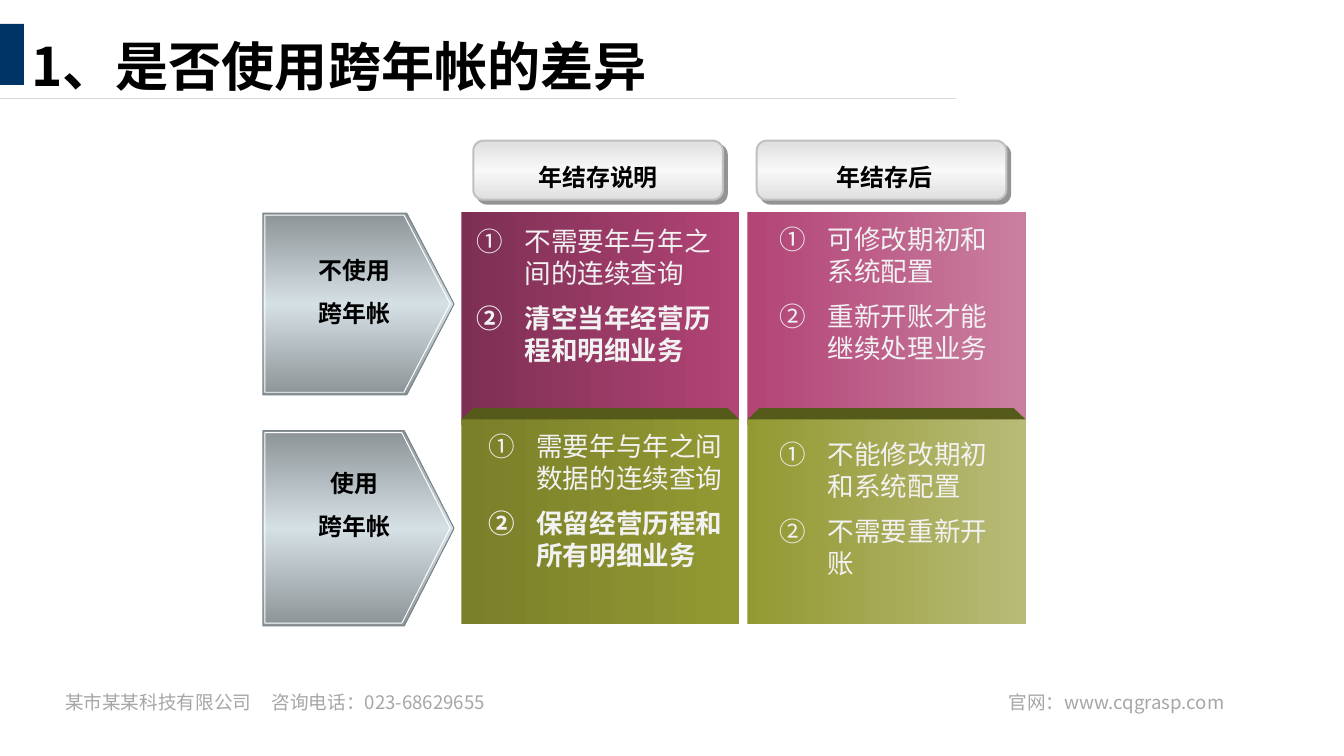
from copy import deepcopy
from dataclasses import dataclass, field
from typing import Any

from lxml import etree
from pptx import Presentation
from pptx import slide as sl
from pptx import util as u
from pptx.dml.color import RGBColor
from pptx.enum import shapes, text
from pptx.oxml import ns
from pptx.shapes import autoshape, base
from pptx.text import text as tx

Box = tuple[float, float, float, float]


@dataclass(frozen=True)
class Theme:
    """Colours, type sizes and font of the slide."""
    font: str = "Noto Sans CJK SC"
    ink: str = "000000"
    body: str = "F2F2F2"
    muted: str = "A6A6A6"
    accent: str = "003366"
    rule: str = "D9D9D9"
    bevel: str = "555A1B"
    label_shadow: str = "C0C0C0"
    pill_shadow: str = "292929"
    pill_line: str = "C0C0C0"
    plate_line: str = "76858A"
    plate_inner: str = "FFFFFF"
    pill: tuple[str, ...] = ("DFDFDF", "F8F8F8", "DFDFDF")
    plate: tuple[str, ...] = ("8D9498", "D5E0E5", "8D9498")
    title_size: float = 40
    body_size: float = 20
    label_size: float = 18
    footer_size: float = 14


THEME = Theme()


@dataclass(frozen=True)
class Style:
    """Text format of one box."""
    size: float
    color: str
    align: Any = text.PP_ALIGN.LEFT
    bold: bool = False
    leading: float = 1.2
    indent: float = 0
    tab: float = 0
    glow: str = ""


@dataclass(frozen=True)
class Caption:
    """Lines of text in a box, with the indices of bold lines."""
    box: Box
    lines: tuple[str, ...]
    style: Style
    strong: tuple[int, ...] = field(default=())


@dataclass(frozen=True)
class Panel:
    """Coloured cell of the comparison grid."""
    column: int
    row: int
    colors: tuple[str, str]


LABEL = Style(THEME.label_size, THEME.ink, text.PP_ALIGN.CENTER, True, 1.8,
              glow=THEME.label_shadow)
NEAR = Style(THEME.body_size, THEME.body, indent=36)
FAR = Style(THEME.body_size, THEME.body, indent=50.4)
TITLE = Caption((16.5, 18, 523.5, 55.5), ("1、是否使用跨年帐的差异",),
                Style(THEME.title_size, THEME.ink, bold=True))
COLUMN_X, COLUMN_W = (347.5, 563), 209.5
ROWS = ((160, 160), (316, 154.5))
BEVEL_H = 8.5
PILL_X = (356.5, 570)
PLATES = ((160.5, 137), (324.5, 147))
PANELS = (
    Panel(1, 0, ("B24476", "CA7FA0")),
    Panel(0, 0, ("7D2F53", "B24476")),
    Panel(1, 1, ("939932", "B8BB78")),
    Panel(0, 1, ("7A7F29", "939932")),
)
CAPTIONS = (
    Caption((352, 164, 202.5, 117), ("不需要年与年之间的连续查询", "清空当年经营历程和明细业务"), NEAR, (1,)),
    Caption((346.5, 319, 208, 117), ("需要年与年之间数据的连续查询", "保留经营历程和所有明细业务"), FAR, (1,)),
    Caption((566, 162.5, 202.5, 140), ("可修改期初和系统配置", "重新开账才能继续处理业务"), FAR),
    Caption((566, 324.5, 202.5, 117), ("不能修改期初和系统配置", "不需要重新开账"), FAR),
    Caption((194.5, 176.5, 144.5, 94), ("不使用", "跨年帐"), LABEL),
    Caption((194.5, 337, 144.5, 94), ("使用", "跨年帐"), LABEL),
    Caption((362, 106.5, 177, 46), ("年结存说明",), LABEL),
    Caption((591, 106.5, 150, 46), ("年结存后",), LABEL),
    Caption((42, 516, 360.5, 24.5), ("某市某某科技有限公司\t咨询电话：023-68629655",),
            Style(THEME.footer_size, THEME.muted, tab=155.5)),
    Caption((569, 516, 360.5, 24.5), ("官网：www.cqgrasp.com",),
            Style(THEME.footer_size, THEME.muted, text.PP_ALIGN.RIGHT)),
)


def apply(target: Any, values: dict[str, Any]) -> None:
    """Set each named attribute on the target."""
    for name, value in values.items():
        setattr(target, name, value)


def child(parent: Any, tag: str, **attributes: Any) -> Any:
    """Append a drawing element with attributes."""
    return etree.SubElement(parent, ns.qn(f"a:{tag}"), {k: str(v) for k, v in attributes.items()})


def add_shadow(effects: Any, color: str, distance: float, alpha: int) -> None:
    """Append a sharp diagonal shadow to an effect list."""
    shadow = child(effects, "outerShdw", blurRad=0, dist=u.Pt(distance), dir=2700000,
                   algn="tl", rotWithShape=0)
    child(child(shadow, "srgbClr", val=color), "alpha", val=alpha * 1000)


def paint(shape: autoshape.Shape, colors: tuple[str, ...], angle: float) -> None:
    """Fill a shape with one colour, an even gradient or nothing."""
    if not colors:
        shape.fill.background()
    elif len(colors) == 1:
        shape.fill.solid()
        shape.fill.fore_color.rgb = RGBColor.from_string(colors[0])
    else:
        shape.fill.gradient()
        shape.fill.gradient_angle = angle
        stop_list = shape.element.spPr.find(".//" + ns.qn("a:gsLst"))
        for _ in colors[2:]:
            stop_list.append(deepcopy(stop_list[0]))
        for i, (stop, color) in enumerate(zip(shape.fill.gradient_stops, colors)):
            stop.position = i / (len(colors) - 1)
            stop.color.rgb = RGBColor.from_string(color)


def add_block(slide: sl.Slide, kind: Any, box: Box, colors: tuple[str, ...], angle: float = 0,
              line: str = "", width: float = 0.75, adjust: float | None = None) -> autoshape.Shape:
    """Draw a preset shape without theme effects."""
    shape = slide.shapes.add_shape(kind, *map(u.Pt, box))
    shape.shadow.inherit = False
    paint(shape, colors, angle)
    if line:
        shape.line.color.rgb = RGBColor.from_string(line)
        shape.line.width = u.Pt(width)
    else:
        shape.line.fill.background()
    if adjust is not None:
        shape.adjustments[0] = adjust
    return shape


def write_line(paragraph: Any, words: str, style: Style, bold: bool, first: bool) -> None:
    """Write one formatted paragraph."""
    properties = paragraph._p.get_or_add_pPr()
    if style.indent:
        properties.set("marL", str(u.Pt(style.indent)))
        properties.set("indent", str(-u.Pt(36)))
        child(properties, "buAutoNum", type="circleNumDbPlain")
    if style.tab:
        child(child(properties, "tabLst"), "tab", pos=u.Pt(style.tab), algn="l")
    apply(paragraph, {"alignment": style.align, "line_spacing": u.Pt(style.size * style.leading),
                      "space_before": u.Pt(10 if style.indent and not first else 0)})
    run = paragraph.add_run()
    run.text = words
    apply(run.font, {"size": u.Pt(style.size), "bold": bold, "name": THEME.font})
    run.font.color.rgb = RGBColor.from_string(style.color)
    latin = run._r.rPr.find(ns.qn("a:latin"))
    east_asian = child(run._r.rPr, "ea", typeface=THEME.font)
    latin.addnext(east_asian)
    if style.glow:
        effects = child(run._r.rPr, "effectLst")
        add_shadow(effects, style.glow, 1.5, 100)
        latin.addprevious(effects)


def write(shape: base.BaseShape, caption: Caption) -> None:
    """Place a text shape and fill it with its caption."""
    apply(shape, dict(zip(("left", "top", "width", "height"), map(u.Pt, caption.box))))
    frame: tx.TextFrame = shape.text_frame
    style = caption.style
    apply(frame, {"word_wrap": True, "auto_size": text.MSO_AUTO_SIZE.NONE,
                  "vertical_anchor": text.MSO_ANCHOR.TOP, "margin_left": u.Pt(7.2),
                  "margin_right": u.Pt(7.2), "margin_top": u.Pt(3.6 + style.size * 0.08),
                  "margin_bottom": 0})
    for i, words in enumerate(caption.lines):
        paragraph = frame.add_paragraph() if i else frame.paragraphs[0]
        write_line(paragraph, words, style, style.bold or i in caption.strong, i == 0)


def main() -> None:
    """Build the comparison slide and save it."""
    deck = Presentation()
    apply(deck, {"slide_width": u.Pt(1012.3), "slide_height": u.Pt(569.5)})
    slide = deck.slides.add_slide(deck.slide_layouts[5])
    kinds = shapes.MSO_SHAPE
    write(slide.shapes.title, TITLE)
    add_block(slide, kinds.RECTANGLE, (0, 18, 18, 46), (THEME.accent,))
    for panel in PANELS:
        x, (y, height) = COLUMN_X[panel.column], ROWS[panel.row]
        add_block(slide, kinds.RECTANGLE, (x, y, COLUMN_W, height), panel.colors)
        if panel.row:
            add_block(slide, kinds.TRAPEZOID, (x, y - BEVEL_H, COLUMN_W, BEVEL_H),
                      (THEME.bevel,), adjust=1.05)
    for x in PILL_X:
        pill = add_block(slide, kinds.ROUNDED_RECTANGLE, (x, 106, 188, 44.5), THEME.pill, 90,
                         THEME.pill_line, 1.5, 0.17)
        add_shadow(pill.element.spPr.find(ns.qn("a:effectLst")), THEME.pill_shadow, 4.2, 50)
    for y, height in PLATES:
        add_block(slide, kinds.PENTAGON, (198, y, 144, height), THEME.plate, 90,
                  THEME.plate_line, adjust=0.26)
        add_block(slide, kinds.PENTAGON, (199.5, y + 1.5, 139.5, height - 3.5), (),
                  line=THEME.plate_inner, adjust=0.26)
    for caption in CAPTIONS:
        write(slide.shapes.add_textbox(*map(u.Pt, caption.box)), caption)
    rule = slide.shapes.add_connector(shapes.MSO_CONNECTOR.STRAIGHT, 0, u.Pt(74), u.Pt(720), u.Pt(74))
    rule.line.color.rgb = RGBColor.from_string(THEME.rule)
    rule.line.width = u.Pt(0.5)
    child(rule.element.spPr, "effectLst")
    deck.save("out.pptx")


if __name__ == "__main__":
    main()
